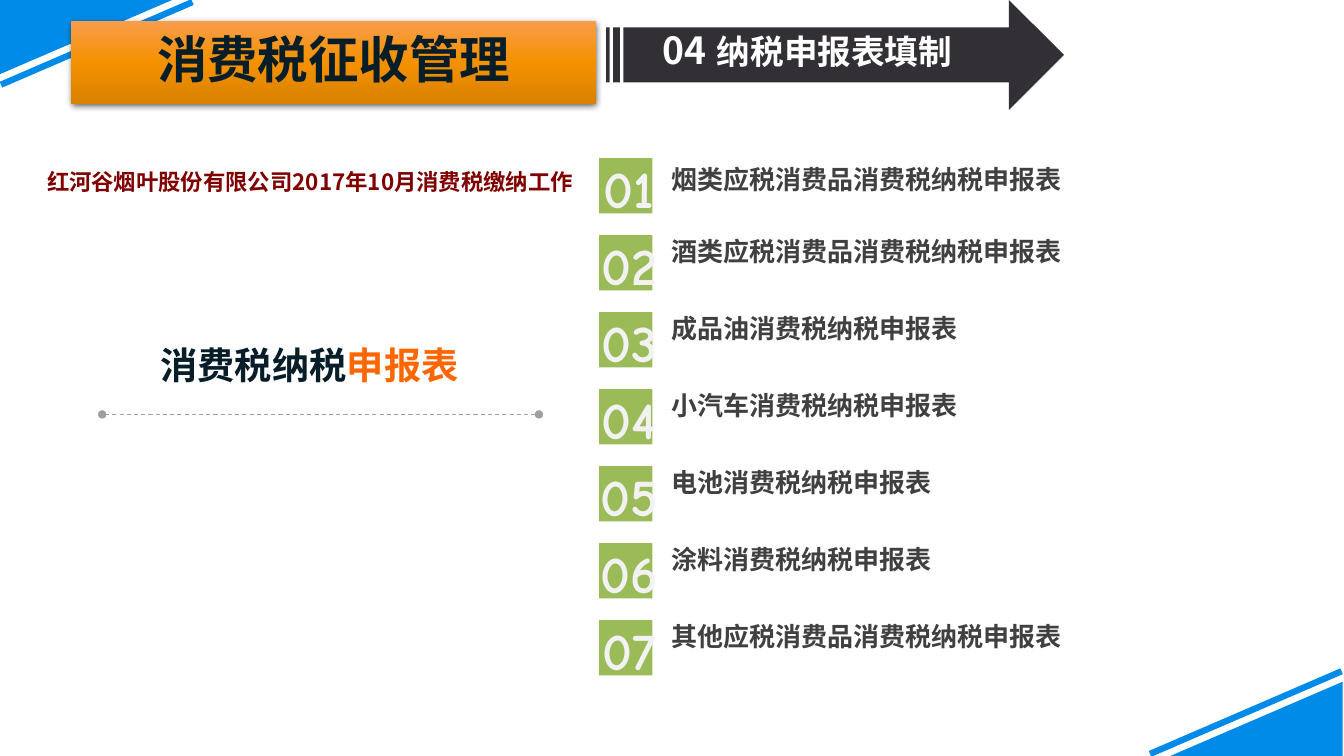
from dataclasses import dataclass

from lxml import etree
from pptx import Presentation
from pptx import util as u
from pptx.dml.color import RGBColor
from pptx.enum import shapes, text
from pptx.oxml import ns

SANS = "Noto Sans CJK SC"
COMIC = "Comic Neue"
BLUE, CHARCOAL, GREEN = "018BE9", "323034", "9BBB59"
NAVY, ORANGE, MAROON = "071D28", "FF6600", "800000"
ROW_TOP, ROW_PITCH = 113, 55


@dataclass
class Span:
    words: str
    size: float
    color: str
    font: str = SANS


@dataclass
class Box:
    left: float
    top: float
    width: float
    height: float


def rgb(color: str) -> RGBColor:
    return RGBColor.from_string(color)


def place(shape, box: Box) -> None:
    shape.left, shape.top = u.Pt(box.left), u.Pt(box.top)
    shape.width, shape.height = u.Pt(box.width), u.Pt(box.height)


def paint(shape, color: str) -> None:
    shape.shadow.inherit = False
    shape.fill.solid()
    shape.fill.fore_color.rgb = rgb(color)
    shape.line.fill.background()


def write(shape, spans: list[Span], centred: bool = False,
          middle: bool = False, spacing: float = 0.85) -> None:
    frame = shape.text_frame
    frame.word_wrap = True
    frame.auto_size = text.MSO_AUTO_SIZE.NONE
    frame.vertical_anchor = text.MSO_ANCHOR.MIDDLE if middle else text.MSO_ANCHOR.TOP
    para = frame.paragraphs[0]
    para.alignment = text.PP_ALIGN.CENTER if centred else text.PP_ALIGN.LEFT
    para.line_spacing = spacing
    for item in spans:
        span = para.add_run()
        span.text = item.words
        span.font.size = u.Pt(item.size)
        span.font.bold = True
        span.font.color.rgb = rgb(item.color)
        span.font.name = item.font
        east = etree.SubElement(span.font._element, ns.qn("a:ea"))
        east.set("typeface", item.font)


def add_text(page, box: Box, spans: list[Span], **options) -> None:
    shape = page.shapes.add_textbox(0, 0, 0, 0)
    place(shape, box)
    write(shape, spans, **options)


def add_line(page, start: tuple, end: tuple, color: str, weight: float):
    line = page.shapes.add_connector(
        shapes.MSO_CONNECTOR.STRAIGHT, *(u.Pt(v) for v in (*start, *end)))
    line.line.color.rgb = rgb(color)
    line.line.width = u.Pt(weight)
    etree.SubElement(line._element.spPr, ns.qn("a:effectLst"))
    return line


def add_corner(page, flipped: bool) -> None:
    def turn(x: float, y: float) -> tuple:
        return (959 - x, 540 - y) if flipped else (x, y)

    outline = [turn(0, 0), turn(123, 0), turn(0, 53)]
    builder = page.shapes.build_freeform(*outline[0], scale=u.Pt(1))
    builder.add_line_segments(outline[1:], close=True)
    paint(builder.convert_to_shape(), BLUE)
    add_line(page, turn(0.7, 60.5), turn(137.5, 1.5), BLUE, 4.5)


def add_row(page, index: int, label: str) -> None:
    top = ROW_TOP + index * ROW_PITCH
    tile = page.shapes.add_shape(shapes.MSO_SHAPE.RECTANGLE, 0, 0, 0, 0)
    place(tile, Box(428, top, 38, 39.5))
    paint(tile, GREEN)
    add_text(page, Box(402.5, top - 5, 94, 52.5),
             [Span(f"{index + 1:02}", 37.4, "F2F2F2", COMIC)],
             centred=True, spacing=1.0)
    label_top = top + 3.6 if index == 0 else top
    add_text(page, Box(472.5, label_top, 316, 29.5), [Span(label, 18.6, "404040")])


def style_title(title) -> None:
    """Round the title box and give it an orange gradient and a soft shadow."""
    stops = "".join(
        f'<a:gs pos="{position}"><a:srgbClr val="{color}"/></a:gs>'
        for position, color in ((0, "F99D4B"), (50000, "F49100"), (100000, "D98100")))
    look = etree.fromstring(
        f'<a:look xmlns:a="{ns.namespaces("a")["a"]}">'
        '<a:prstGeom prst="roundRect"><a:avLst/></a:prstGeom>'
        f'<a:gradFill rotWithShape="1"><a:gsLst>{stops}</a:gsLst>'
        '<a:lin ang="5400000" scaled="0"/></a:gradFill><a:ln><a:noFill/></a:ln>'
        f'<a:effectLst><a:outerShdw blurRad="{u.Pt(4.5)}" dist="{u.Pt(1.5)}" '
        'dir="5400000" rotWithShape="0"><a:srgbClr val="000000">'
        '<a:alpha val="63000"/></a:srgbClr></a:outerShdw></a:effectLst></a:look>')
    for part in list(look):
        title._element.spPr.append(part)


def main() -> None:
    deck = Presentation()
    deck.slide_width, deck.slide_height = u.Pt(960), u.Pt(540)
    page = deck.slides.add_slide(deck.slide_layouts[5])

    # Corner decoration
    for flipped in (True, False):
        add_corner(page, flipped)

    # Section arrow
    arrow = page.shapes.add_shape(shapes.MSO_SHAPE.STRIPED_RIGHT_ARROW, 0, 0, 0, 0)
    place(arrow, Box(433, 0, 327, 78.5))
    paint(arrow, CHARCOAL)
    add_text(page, Box(387.5, 13.5, 378.5, 46),
             [Span("04", 26.6, "FFFFFF"), Span(" ", 32, "FFFFFF"),
              Span("纳税申报表填制", 24, "FFFFFF")], centred=True, middle=True)

    # Topic with dotted rule
    add_text(page, Box(107.5, 245.5, 313, 40),
             [Span("消费税纳税", 26.6, NAVY), Span("申报表", 26.6, ORANGE)])
    rule = add_line(page, (385, 296), (73, 296), "9F9F9F", 0.75)
    stroke = rule.line._get_or_add_ln()
    etree.SubElement(stroke, ns.qn("a:prstDash")).set("val", "dash")
    for end in ("a:headEnd", "a:tailEnd"):
        etree.SubElement(stroke, ns.qn(end)).set("type", "oval")

    # Numbered list of forms
    forms = ["烟类应税消费品消费税纳税申报表", "酒类应税消费品消费税纳税申报表",
             "成品油消费税纳税申报表", "小汽车消费税纳税申报表",
             "电池消费税纳税申报表", "涂料消费税纳税申报表",
             "其他应税消费品消费税纳税申报表"]
    for index, label in enumerate(forms):
        add_row(page, index, label)

    # Case name
    add_text(page, Box(26.5, 119.5, 394, 46),
             [Span("红河谷烟叶股份有限公司2017年10月消费税缴纳工作", 16, MAROON)])

    # Title, in front of the corner
    title = page.shapes.title
    place(title, Box(51, 15, 374.5, 59))
    style_title(title)
    write(title, [Span("消费税征收管理", 36, NAVY)],
          centred=True, middle=True, spacing=0.92)
    title._element.getparent().append(title._element)

    deck.save("out.pptx")


if __name__ == "__main__":
    main()
